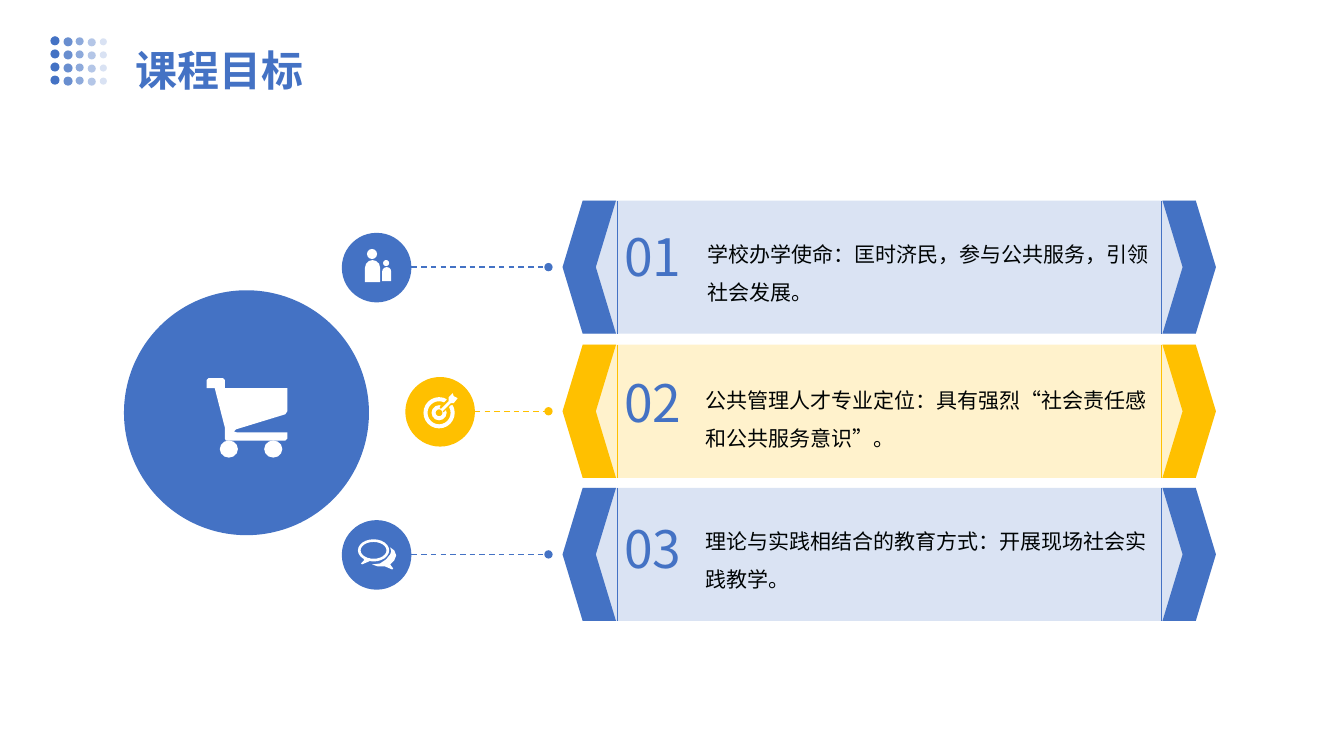
import dataclasses
import typing

import lxml.etree
import pptx
import pptx.dml.color
import pptx.enum.dml
import pptx.enum.shapes
import pptx.enum.text
import pptx.oxml.ns
import pptx.util

PX = 9144  # EMU per px, 100 px to the inch
FONT = "Noto Sans CJK SC"
BLUE, GOLD, WHITE, INK = "4472C4", "FFC000", "FFFFFF", "000404"
PALE_BLUE, PALE_GOLD = "DAE3F3", "FFF2CC"
KIND = pptx.enum.shapes.MSO_SHAPE
ALIGN = pptx.enum.text.PP_ALIGN
ANCHOR = pptx.enum.text.MSO_ANCHOR
FIT = pptx.enum.text.MSO_AUTO_SIZE
Box = tuple[int, int, int, int]
Points = list[tuple[int, int]]


@dataclasses.dataclass
class Goal:
    number: str
    text: str
    top: int
    disc_left: int
    body_left: int
    body_top: int
    color: str
    pale: str


@dataclasses.dataclass
class Style:
    size: float
    color: str
    spacing: float
    before: float = 0
    bold: bool = False
    align: typing.Any = ALIGN.LEFT
    anchor: typing.Any = ANCHOR.TOP
    wrap: bool = True
    fit: typing.Any = FIT.SHAPE_TO_FIT_TEXT


GOALS = [
    Goal("01", "学校办学使命：匡时济民，参与公共服务，引领社会发展。",
         199, 339, 694, 209, BLUE, PALE_BLUE),
    Goal("02", "公共管理人才专业定位：具有强烈“社会责任感和公共服务意识”。",
         342, 402, 692, 354, GOLD, PALE_GOLD),
    Goal("03", "理论与实践相结合的教育方式：开展现场社会实践教学。",
         484, 339, 692, 494, BLUE, PALE_BLUE),
]
TITLE = Style(30, BLUE, 1.4, bold=True)
NUMBER = Style(36.8, BLUE, 0.8, align=ALIGN.CENTER, wrap=False)
BODY = Style(15, INK, 1.5, before=2.7, anchor=ANCHOR.MIDDLE, fit=FIT.NONE)
BAND = 132
DISC = 69

CART = [(234, 426), (283, 411), (285, 408), (285, 385), (223, 385), (223, 377),
        (221, 375), (207, 375), (205, 377), (205, 385), (213, 385), (223, 424),
        (223, 435), (224, 437), (283, 437), (285, 435), (285, 429), (235, 429),
        (232, 428)]
NOTCH = [(436, 404), (443, 397), (443, 391), (453, 399), (449, 402), (447, 402),
         (440, 409)]
DART = [(437, 406), (445, 398), (445, 394), (449, 390), (450, 393), (454, 395),
        (450, 400), (447, 400), (439, 408)]
TAIL = [(361, 554), (361, 556), (358, 559), (359, 560), (366, 557), (367, 554)]
REPLY = [(387, 543), (391, 546), (393, 551), (391, 556), (387, 560), (390, 564),
         (389, 565), (382, 562), (375, 562), (369, 560), (377, 559), (383, 555),
         (387, 550), (388, 547)]

deck = pptx.Presentation()
deck.slide_width, deck.slide_height = 1333 * PX, 750 * PX
shapes = deck.slides.add_slide(deck.slide_layouts[6]).shapes


def rgb(code: str) -> pptx.dml.color.RGBColor:
    return pptx.dml.color.RGBColor.from_string(code)


def add_tag(parent: typing.Any, name: str, **attrs: str) -> None:
    lxml.etree.SubElement(parent, pptx.oxml.ns.qn(name), attrs)


def paint(shape: typing.Any, color: str, alpha: int = 100) -> None:
    """Give a flat fill, with alpha in percent, and no line or shadow."""
    shape.shadow.inherit = False
    shape.fill.solid()
    shape.fill.fore_color.rgb = rgb(color)
    shape.line.fill.background()
    if alpha < 100:
        tint = shape.fill._xPr.find(".//" + pptx.oxml.ns.qn("a:srgbClr"))
        add_tag(tint, "a:alpha", val=str(alpha * 1000))


def add_form(kind: typing.Any, box: Box, color: str, alpha: int = 100) -> typing.Any:
    shape = shapes.add_shape(kind, *(side * PX for side in box))
    paint(shape, color, alpha)
    return shape


def add_ring(box: Box, band: float) -> None:
    """Draw a white ring; band is its thickness over its shorter side."""
    add_form(KIND.DONUT, box, WHITE).adjustments[0] = band


def add_outline(points: Points, color: str) -> None:
    pen = shapes.build_freeform(*points[0], scale=PX)
    pen.add_line_segments(points[1:], close=True)
    paint(pen.convert_to_shape(), color)


def add_line(start: tuple[int, int], end: tuple[int, int], color: str,
             width: float) -> typing.Any:
    line = shapes.add_connector(pptx.enum.shapes.MSO_CONNECTOR.STRAIGHT,
                                *(at * PX for at in start + end))
    line.line.color.rgb = rgb(color)
    line.line.width = pptx.util.Pt(width)
    add_tag(line._element.spPr, "a:effectLst")
    return line


def add_text(text: str, box: Box, inset: Box, style: Style) -> None:
    frame = shapes.add_textbox(*(side * PX for side in box)).text_frame
    frame.word_wrap, frame.auto_size = style.wrap, style.fit
    frame.vertical_anchor = style.anchor
    (frame.margin_left, frame.margin_top, frame.margin_right,
     frame.margin_bottom) = (side * PX for side in inset)
    frame.text = text
    para = frame.paragraphs[0]
    para.alignment, para.line_spacing = style.align, style.spacing
    para.space_before = pptx.util.Pt(style.before)
    font = para.runs[0].font
    font.size, font.bold = pptx.util.Pt(style.size), style.bold
    font.color.rgb = rgb(style.color)
    font.name = FONT
    add_tag(font._element, "a:ea", typeface=FONT)


def add_goal(goal: Goal, row: int) -> None:
    top, low, mid = goal.top, goal.top + BAND, goal.top + BAND // 2
    link = add_line((goal.disc_left + DISC, mid), (544, mid), goal.color, 1)
    link.line.dash_style = pptx.enum.dml.MSO_LINE.DASH
    add_tag(link.line._ln, "a:tailEnd", type="oval")
    add_form(KIND.OVAL, (goal.disc_left, mid - DISC // 2, DISC, DISC), goal.color)
    add_outline([(578, top), (1186, top), (1206, mid), (1186, low), (578, low),
                 (558, mid)], goal.pale)
    for tip, side in ((558, 1), (1206, -1)):
        back, edge, notch, seam = (tip + side * step for step in (20, 53, 33, 54))
        add_outline([(tip, mid), (back, top), (edge, top), (notch, mid),
                     (edge, low), (back, low)], goal.color)
        add_line((seam, top), (seam, low), goal.color, 0.1)
    add_text(goal.number, (618, 235 + 145 * row, 59, 59), (0, 0, 0, 0), NUMBER)
    add_text(goal.text, (goal.body_left, goal.body_top, 460, 111), (8, 8, 4, 8), BODY)


def add_cart() -> None:
    add_form(KIND.OVAL, (123, 288, 243, 243), BLUE)
    add_outline(CART, WHITE)
    for left in (218, 262):
        add_form(KIND.OVAL, (left, 437, 18, 17), WHITE)


def add_people() -> None:
    for head, body in (((364, 247, 10, 10), (362, 258, 15, 22)),
                       ((380, 258, 6, 6), (379, 265, 9, 14))):
        add_form(KIND.OVAL, head, WHITE)
        torso = add_form(KIND.ROUND_2_SAME_RECTANGLE, body, WHITE)
        torso.adjustments[0] = 0.5


def add_target() -> None:
    add_ring((420, 394, 31, 31), 0.13)
    add_ring((428, 402, 15, 15), 0.27)
    add_outline(NOTCH, GOLD)
    add_outline(DART, WHITE)


def add_chat() -> None:
    add_ring((355, 535, 31, 22), 0.12)
    add_outline(TAIL, WHITE)
    add_outline(REPLY, WHITE)


def add_dots() -> None:
    for row in range(4):
        for col, (left, top, size) in enumerate(
                [(50, 36, 9), (63, 37, 9), (75, 37, 8), (87, 38, 8), (99, 38, 7)]):
            add_form(KIND.OVAL, (left, top + 13 * row, size, size), BLUE,
                     100 - 20 * col)


def main() -> None:
    add_cart()
    for row, goal in enumerate(GOALS):
        add_goal(goal, row)
    add_people()
    add_target()
    add_chat()
    add_dots()
    add_text("课程目标", (120, 10, 1094, 100), (14, 14, 6, 14), TITLE)
    deck.save("out.pptx")


if __name__ == "__main__":
    main()
